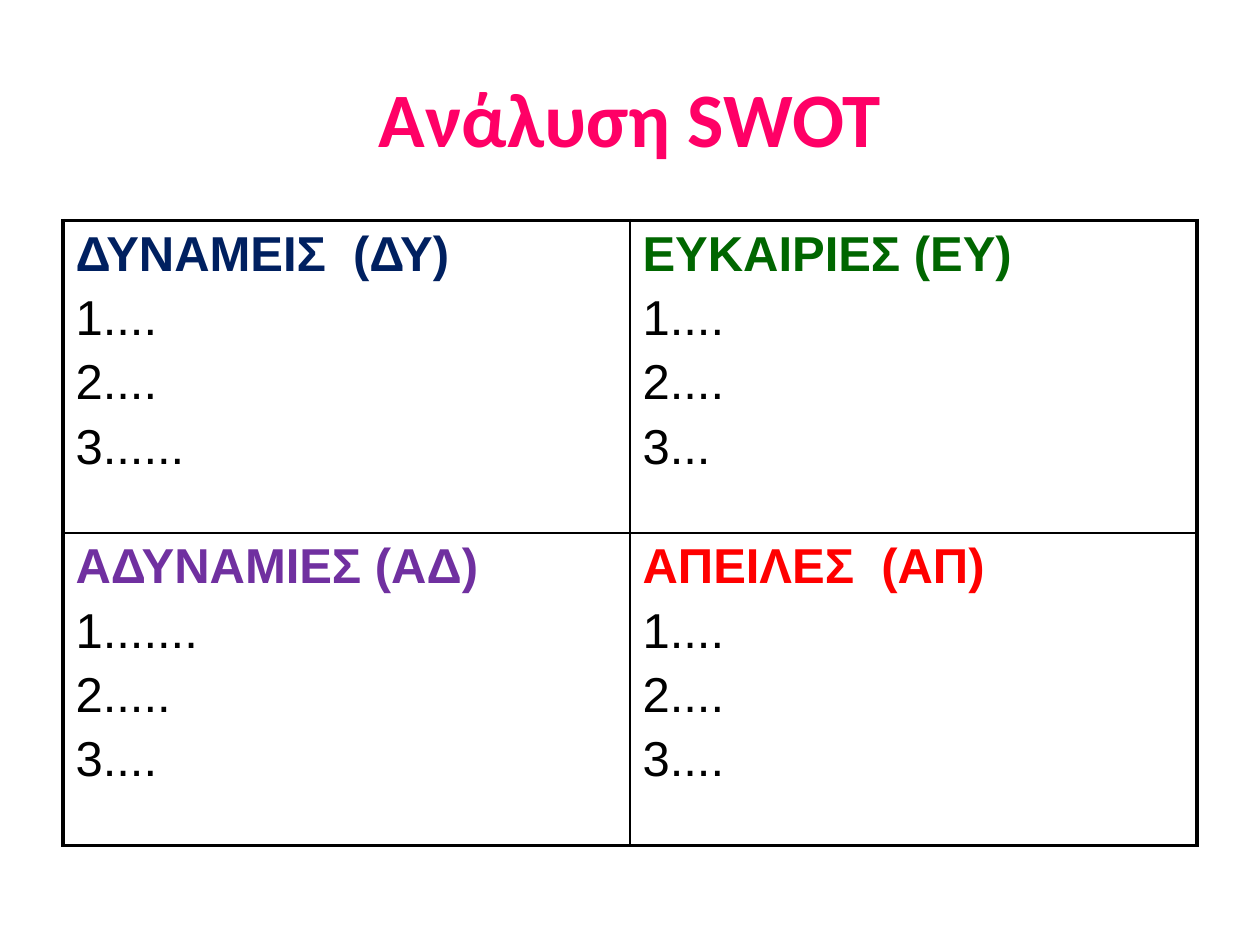
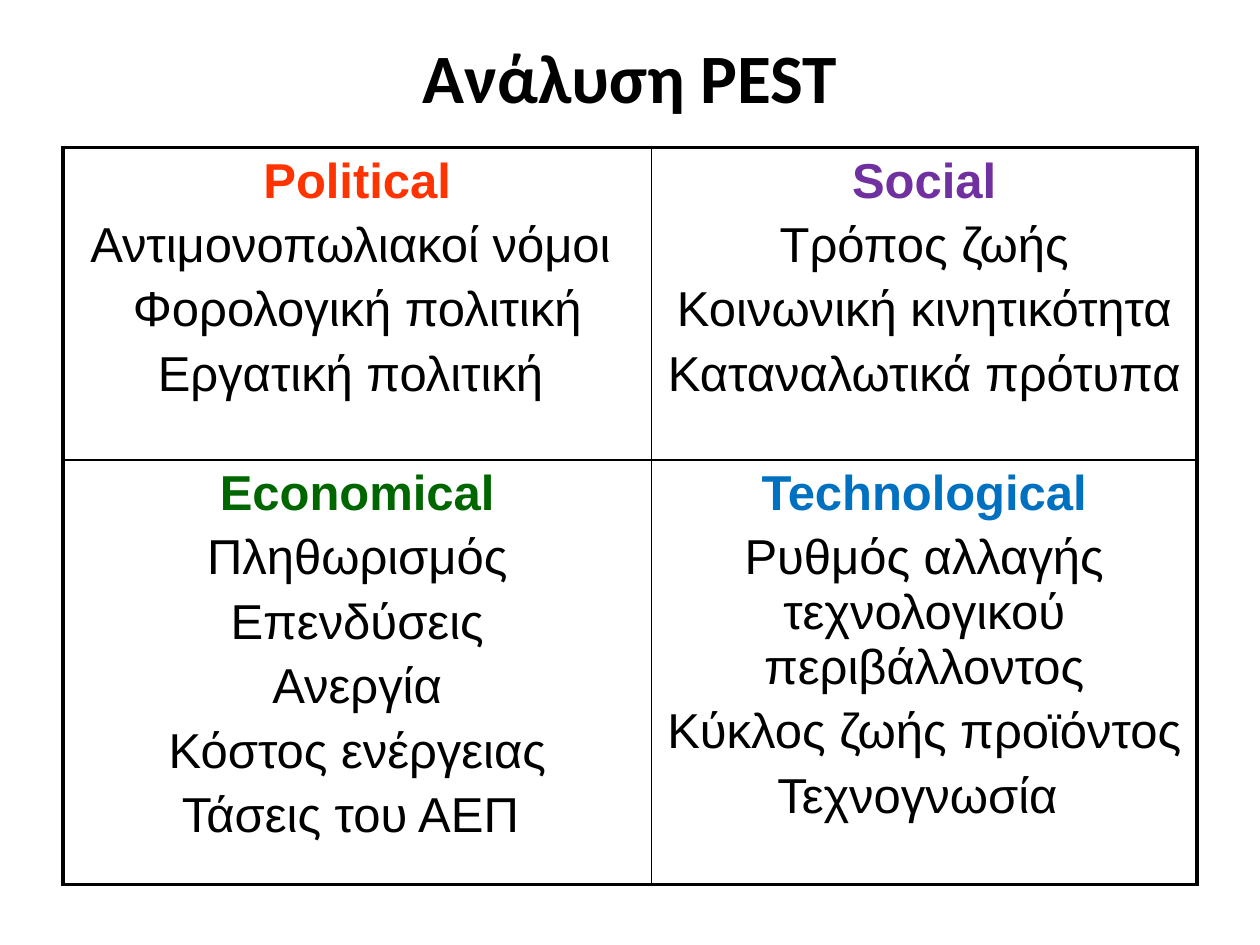
from dataclasses import dataclass

from lxml.etree import SubElement
from pptx import Presentation
from pptx.dml.color import RGBColor
from pptx.enum.text import MSO_ANCHOR, PP_ALIGN
from pptx.oxml.ns import qn
from pptx.slide import Slide
from pptx.table import _Cell as Cell
from pptx.util import Inches, Pt

BLACK = RGBColor(0x00, 0x00, 0x00)
PINK = RGBColor(0xFF, 0x00, 0x66)
NAVY = RGBColor(0x00, 0x20, 0x60)
GREEN = RGBColor(0x00, 0x66, 0x00)
PURPLE = RGBColor(0x70, 0x30, 0xA0)
RED = RGBColor(0xFF, 0x00, 0x00)
ORANGE = RGBColor(0xFF, 0x33, 0x00)
BLUE = RGBColor(0x00, 0x70, 0xC0)

TITLE_FONT, BODY_FONT = "Calibri", "Arial"
BODY_SIZE = 28
OUTER_LINE, INNER_LINE = Pt(2.25), Pt(1)
LEFT, WIDTH = Inches(0.5), Inches(9)


@dataclass(frozen=True)
class Quadrant:
    heading: str
    color: RGBColor
    items: tuple[str, ...]


@dataclass(frozen=True)
class Matrix:
    title: str
    title_color: RGBColor
    title_size: float
    title_height: float
    top: float
    cols: tuple[float, float]
    rows: tuple[float, float]
    align: PP_ALIGN
    quadrants: tuple[tuple[Quadrant, Quadrant], ...]


SWOT = Matrix(
    "Ανάλυση SWOT", PINK, 44, 1.25, 1.75, (4.5, 4.5), (2.48, 2.48), PP_ALIGN.LEFT,
    ((Quadrant("ΔΥΝΑΜΕΙΣ  (ΔΥ)", NAVY, ("1....", "2....", "3......")),
      Quadrant("ΕΥΚΑΙΡΙΕΣ (ΕΥ)", GREEN, ("1....", "2....", "3..."))),
     (Quadrant("ΑΔΥΝΑΜΙΕΣ (ΑΔ)", PURPLE, ("1.......", "2.....", "3....")),
      Quadrant("ΑΠΕΙΛΕΣ  (ΑΠ)", RED, ("1....", "2....", "3....")))))

PEST = Matrix(
    "Ανάλυση PEST", BLACK, 39.6, 0.61, 1.17, (4.67, 4.33), (2.48, 3.37), PP_ALIGN.CENTER,
    ((Quadrant("Political", ORANGE, (
        "Αντιμονοπωλιακοί νόμοι ", "Φορολογική πολιτική", "Εργατική πολιτική ")),
      Quadrant("Social", PURPLE, (
          "Τρόπος ζωής", "Κοινωνική κινητικότητα", "Καταναλωτικά πρότυπα "))),
     (Quadrant("Economical", GREEN, (
         "Πληθωρισμός", "Επενδύσεις", "Ανεργία", "Κόστος ενέργειας", "Τάσεις του ΑΕΠ ")),
      Quadrant("Technological", BLUE, (
          "Ρυθμός αλλαγής τεχνολογικού περιβάλλοντος", "Κύκλος ζωής προϊόντος",
          "Τεχνογνωσία ")))))


def add_run(p, text: str, font: str, size: float, color: RGBColor, bold: bool) -> None:
    r = p.add_run()
    r.text = text
    r.font.name = font
    r.font.size = Pt(size)
    r.font.bold = bold
    r.font.color.rgb = color


def add_title(s: Slide, m: Matrix) -> None:
    tf = s.shapes.add_textbox(LEFT, Inches(0.3), WIDTH, Inches(m.title_height)).text_frame
    tf.word_wrap = True
    tf.vertical_anchor = MSO_ANCHOR.MIDDLE
    tf.margin_top = tf.margin_bottom = 0
    p = tf.paragraphs[0]
    p.alignment = PP_ALIGN.CENTER
    add_run(p, m.title, TITLE_FONT, m.title_size, m.title_color, True)


def set_borders(cell: Cell, row: int, col: int) -> None:
    """Thick lines on the outside of the 2 x 2 grid, thin ones inside."""
    outer = {"L": col == 0, "R": col == 1, "T": row == 0, "B": row == 1}
    tc_pr = cell._tc.get_or_add_tcPr()
    for i, (side, thick) in enumerate(outer.items()):
        width = OUTER_LINE if thick else INNER_LINE
        ln = SubElement(tc_pr, qn(f"a:ln{side}"), w=str(width))
        fill = SubElement(ln, qn("a:solidFill"))
        SubElement(fill, qn("a:srgbClr"), val=str(BLACK))
        tc_pr.insert(i, ln)


def fill_quadrant(cell: Cell, quadrant: Quadrant, align: PP_ALIGN) -> None:
    tf = cell.text_frame
    for i, text in enumerate((quadrant.heading, *quadrant.items)):
        p = tf.add_paragraph() if i else tf.paragraphs[0]
        p.alignment = align
        p.space_before = Pt(BODY_SIZE * 0.2)
        color = BLACK if i else quadrant.color
        add_run(p, text, BODY_FONT, BODY_SIZE, color, i == 0)


def add_matrix(s: Slide, m: Matrix) -> None:
    table = s.shapes.add_table(
        2, 2, LEFT, Inches(m.top), WIDTH, Inches(sum(m.rows))).table
    table.first_row = table.horz_banding = False
    for column, width in zip(table.columns, m.cols):
        column.width = Inches(width)
    for row, height in zip(table.rows, m.rows):
        row.height = Inches(height)
    for i, quadrants in enumerate(m.quadrants):
        for j, quadrant in enumerate(quadrants):
            cell = table.cell(i, j)
            cell.fill.background()
            set_borders(cell, i, j)
            fill_quadrant(cell, quadrant, m.align)


def main() -> None:
    prs = Presentation()
    prs.slide_width, prs.slide_height = Inches(10), Inches(7.5)
    for m in (SWOT, PEST):
        s = prs.slides.add_slide(prs.slide_layouts[6])
        add_title(s, m)
        add_matrix(s, m)
    prs.save("out.pptx")


if __name__ == "__main__":
    main()
